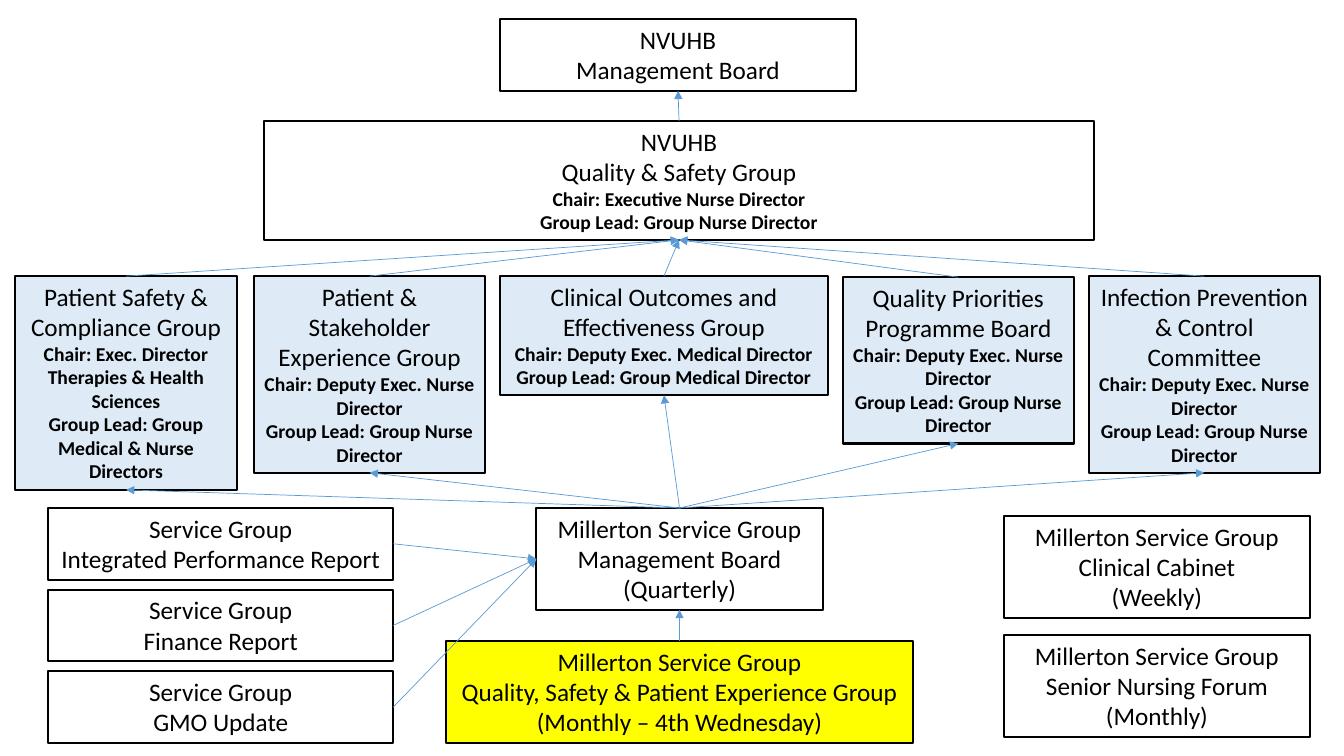
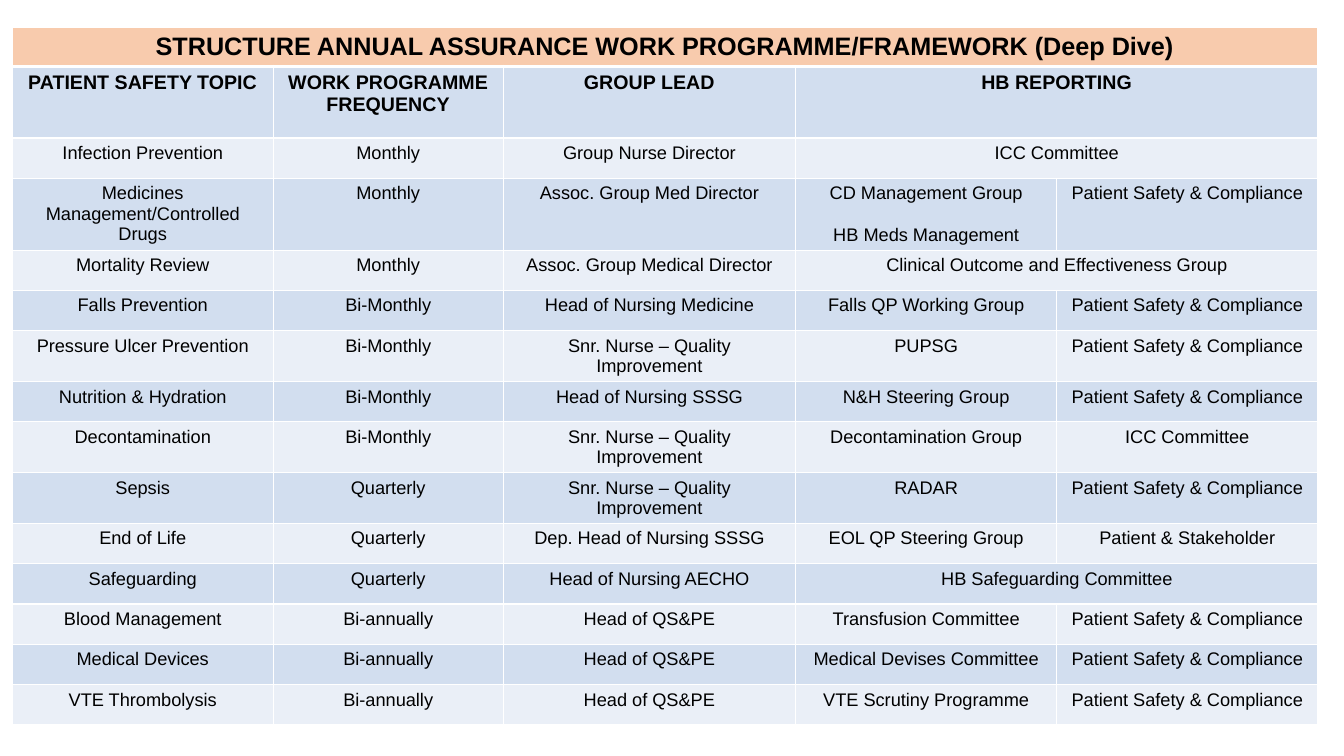
"""Builds a governance structure chart and an annual assurance work programme table."""
from pptx import Presentation
from pptx.dml.color import RGBColor
from pptx.enum import shapes, text
from pptx.oxml.ns import qn
from pptx.util import Inches, Pt
from lxml import etree

BLACK = RGBColor(0x00, 0x00, 0x00)
WHITE = RGBColor(0xFF, 0xFF, 0xFF)
YELLOW = RGBColor(0xFF, 0xFF, 0x00)
PALE_BLUE = RGBColor(0xDE, 0xEB, 0xF7)
ARROW_BLUE = RGBColor(0x5B, 0x9B, 0xD5)
PEACH = RGBColor(0xF8, 0xCB, 0xAD)
BANDS = RGBColor(0xD2, 0xDE, 0xEF), RGBColor(0xEA, 0xEF, 0xF7)

TOP, LEFT, BOTTOM, RIGHT = range(4)
BOARD = "NVUHB"
UNIT = "Millerton Service Group"
NURSE_CHAIR = ["Chair: Deputy Exec. Nurse Director", "Group Lead: Group Nurse Director"]

BOXES = {
    "experience": ((4.42, 6.36, 4.64, 1.01), YELLOW,
                   [UNIT, "Quality, Safety & Patient Experience Group",
                    "(Monthly – 4th Wednesday)"], []),
    "management": ((5.32, 5.04, 2.84, 1.01), None,
                   [UNIT, "Management Board", "(Quarterly)"], []),
    "quality": ((2.62, 1.2, 8.23, 1.18), None, [BOARD, "Quality & Safety Group"],
                ["Chair: Executive Nurse Director", "Group Lead: Group Nurse Director"]),
    "board": ((4.96, 0.19, 3.53, 0.71), None, [BOARD, "Management Board"], []),
    "cabinet": ((9.96, 5.12, 3.03, 1.01), None, [UNIT, "Clinical Cabinet", "(Weekly)"], []),
    "forum": ((9.96, 6.3, 3.03, 1.01), None, [UNIT, "Senior Nursing Forum", "(Monthly)"], []),
    "safety": ((0.15, 2.74, 2.2, 2.12), PALE_BLUE, ["Patient Safety & Compliance Group"],
               ["Chair: Exec. Director Therapies & Health Sciences",
                "Group Lead: Group Medical & Nurse Directors"]),
    "stakeholder": ((2.52, 2.74, 2.29, 1.95), PALE_BLUE,
                    ["Patient & Stakeholder Experience Group"], NURSE_CHAIR),
    "outcomes": ((4.96, 2.74, 3.25, 1.18), PALE_BLUE,
                 ["Clinical Outcomes and Effectiveness Group"],
                 ["Chair: Deputy Exec. Medical Director", "Group Lead: Group Medical Director"]),
    "priorities": ((8.36, 2.75, 2.29, 1.65), PALE_BLUE,
                   ["Quality Priorities Programme Board"], NURSE_CHAIR),
    "infection": ((10.8, 2.74, 2.29, 1.95), PALE_BLUE,
                  ["Infection Prevention & Control Committee"], NURSE_CHAIR),
}
REPORTS = ["Integrated Performance Report", "Finance Report", "GMO Update"]
for number, report in enumerate(REPORTS):
    BOXES[report] = ((0.48, 5.04 + 0.81 * number, 3.42, 0.71), None,
                     ["Service Group", report], [])

GROUPS = ["safety", "stakeholder", "outcomes", "priorities", "infection"]
ARROWS = [("experience", TOP, "management", BOTTOM), ("quality", TOP, "board", BOTTOM)]
ARROWS += [(group, TOP, "quality", BOTTOM) for group in GROUPS]
ARROWS += [("management", TOP, group, BOTTOM) for group in GROUPS]
ARROWS += [(report, RIGHT, "management", LEFT) for report in REPORTS]

TITLE = "STRUCTURE ANNUAL ASSURANCE WORK PROGRAMME/FRAMEWORK (Deep Dive)"
SAFETY = "Patient Safety & Compliance"
IMPROVEMENT = "Snr. Nurse – Quality Improvement"
PROGRAMME = [
    [TITLE],
    ["PATIENT SAFETY TOPIC", "WORK PROGRAMME FREQUENCY", "GROUP LEAD", "HB REPORTING"],
    ["Infection Prevention", "Monthly", "Group Nurse Director", "ICC Committee"],
    ["Medicines Management/Controlled Drugs", "Monthly", "Assoc. Group Med Director",
     "CD Management Group\nHB Meds Management", SAFETY],
    ["Mortality Review", "Monthly", "Assoc. Group Medical Director",
     "Clinical Outcome and Effectiveness Group"],
    ["Falls Prevention", "Bi-Monthly", "Head of Nursing Medicine",
     "Falls QP Working Group", SAFETY],
    ["Pressure Ulcer Prevention", "Bi-Monthly", IMPROVEMENT, "PUPSG", SAFETY],
    ["Nutrition & Hydration", "Bi-Monthly", "Head of Nursing SSSG",
     "N&H Steering Group", SAFETY],
    ["Decontamination", "Bi-Monthly", IMPROVEMENT, "Decontamination Group", "ICC Committee"],
    ["Sepsis", "Quarterly", IMPROVEMENT, "RADAR", SAFETY],
    ["End of Life", "Quarterly", "Dep. Head of Nursing SSSG",
     "EOL QP Steering Group", "Patient & Stakeholder"],
    ["Safeguarding", "Quarterly", "Head of Nursing AECHO", "HB Safeguarding Committee"],
    ["Blood Management", "Bi-annually", "Head of QS&PE", "Transfusion Committee", SAFETY],
    ["Medical Devices", "Bi-annually", "Head of QS&PE", "Medical Devises Committee", SAFETY],
    ["VTE Thrombolysis", "Bi-annually", "Head of QS&PE", "VTE Scrutiny Programme", SAFETY],
]
COLUMN_WIDTHS = [2.59, 2.28, 2.9, 2.59, 2.59]
TALL_ROWS = {0: 0.39, 1: 0.71, 3: 0.71}
ROW_HEIGHT = 0.4


def style(para, font, size, bold):
    """Centre a paragraph and format its runs."""
    para.alignment = text.PP_ALIGN.CENTER
    for span in para.runs:
        span.font.name, span.font.size, span.font.bold = font, Pt(size), bold
        span.font.color.rgb = BLACK


def add_box(page, place, fill, heading, roles):
    """Add an outlined box with heading lines above bold role lines."""
    box = page.shapes.add_textbox(*map(Inches, place))
    box.line.color.rgb, box.line.width = BLACK, Pt(1.5)
    if fill is not None:
        box.fill.solid()
        box.fill.fore_color.rgb = fill
    frame = box.text_frame
    frame.word_wrap = True
    frame.auto_size = text.MSO_AUTO_SIZE.SHAPE_TO_FIT_TEXT
    frame.text = "\n".join(heading + roles)
    for number, para in enumerate(frame.paragraphs):
        is_role = number >= len(heading)
        style(para, "Calibri", 14 if is_role else 18, is_role)
    return box


def add_arrow(page, start, start_side, end, end_side):
    """Join the sides of two boxes with a thin arrow."""
    arrow = page.shapes.add_connector(shapes.MSO_CONNECTOR.STRAIGHT, 0, 0, 0, 0)
    arrow.begin_connect(start, start_side)
    arrow.end_connect(end, end_side)
    arrow.line.color.rgb, arrow.line.width = ARROW_BLUE, Pt(0.5)
    properties = arrow.element.spPr
    etree.SubElement(properties.find(qn("a:ln")), qn("a:tailEnd"), type="triangle")
    etree.SubElement(properties, qn("a:effectLst"))


def add_border(properties, side, points):
    """Put a white border on one side of a table cell."""
    border = etree.Element(qn(f"a:{side}"), w=str(Pt(points)))
    fill = etree.SubElement(border, qn("a:solidFill"))
    etree.SubElement(fill, qn("a:srgbClr"), val=str(WHITE))
    properties.insert(0, border)


def build_structure(page):
    """Draw the reporting structure."""
    boxes = {name: add_box(page, *details) for name, details in BOXES.items()}
    for start, start_side, end, end_side in ARROWS:
        add_arrow(page, boxes[start], start_side, boxes[end], end_side)


def build_programme(page):
    """Draw the work programme table."""
    heights = [TALL_ROWS.get(row, ROW_HEIGHT) for row in range(len(PROGRAMME))]
    last = len(COLUMN_WIDTHS) - 1
    table = page.shapes.add_table(
        len(heights), last + 1, Inches(0.12), Inches(0.27),
        Inches(sum(COLUMN_WIDTHS)), Inches(sum(heights))).table
    for column, width in zip(table.columns, COLUMN_WIDTHS):
        column.width = Inches(width)
    for row, (entries, height) in enumerate(zip(PROGRAMME, heights)):
        table.rows[row].height = Inches(height)
        if len(entries) <= last:
            table.cell(row, len(entries) - 1).merge(table.cell(row, last))
        for column, entry in enumerate(entries):
            cell = table.cell(row, column)
            cell.fill.solid()
            cell.fill.fore_color.rgb = BANDS[(row - 1) % 2] if row else PEACH
            cell.text_frame.text = entry
            for number, para in enumerate(cell.text_frame.paragraphs):
                style(para, "Arial", {0: 18, 1: 14}.get(row, 13), row < 2)
                if number:
                    para.space_before = Pt(15)
        for column in range(last + 1):
            properties = table.cell(row, column)._tc.get_or_add_tcPr()
            add_border(properties, "lnB", 1 if row else 3)
            add_border(properties, "lnT", 3 if row == 1 else 1)


def main():
    """Build and save the deck."""
    deck = Presentation()
    deck.slide_width, deck.slide_height = Inches(13.33), Inches(7.5)
    for build in (build_structure, build_programme):
        build(deck.slides.add_slide(deck.slide_layouts[6]))
    deck.save("out.pptx")


if __name__ == "__main__":
    main()
